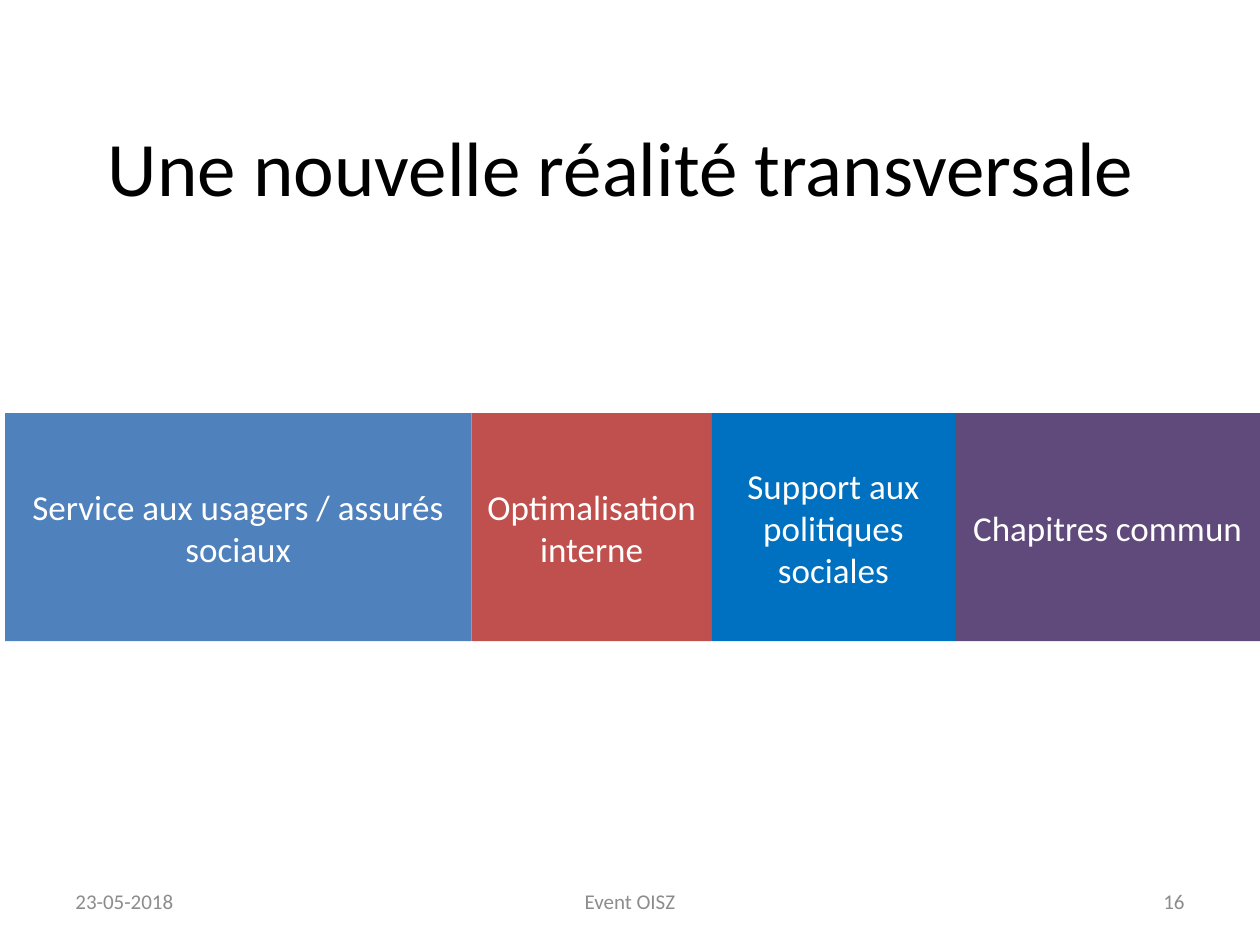
from pptx import Presentation
from pptx.dml.color import RGBColor
from pptx.enum import shapes, text
from pptx.util import Pt

FONT = "Calibri"
BLACK = RGBColor(0x00, 0x00, 0x00)
WHITE = RGBColor(0xFF, 0xFF, 0xFF)
GREY = RGBColor(0x8C, 0x8C, 0x8C)
BLUE = RGBColor(0x4F, 0x81, 0xBD)
RED = RGBColor(0xC0, 0x50, 0x4D)
BRIGHT_BLUE = RGBColor(0x00, 0x70, 0xC0)
PURPLE = RGBColor(0x60, 0x4A, 0x7B)

LEFT, CENTER, RIGHT = text.PP_ALIGN.LEFT, text.PP_ALIGN.CENTER, text.PP_ALIGN.RIGHT

TITLE = "Une nouvelle réalité transversale"
# text, left, width, alignment
FOOTERS = [
    ("23-05-2018", 36, 168, LEFT),
    ("Event OISZ", 246, 228, CENTER),
    ("16", 516, 168, RIGHT),
]
# text, width, fill
THEMES = [
    ("Service aux usagers / assurés sociaux", 266.4, BLUE),
    ("Optimalisation interne", 137.5, RED),
    ("Support aux politiques sociales", 139, BRIGHT_BLUE),
    ("Chapitres commun", 174.2, PURPLE),
]
BAND_LEFT, BAND_TOP, BAND_HEIGHT = 2.9, 236, 130.3


def write(shape, words, size, color, alignment):
    frame = shape.text_frame
    frame.word_wrap = True
    frame.vertical_anchor = text.MSO_ANCHOR.MIDDLE
    frame.text = words
    paragraph = frame.paragraphs[0]
    paragraph.alignment = alignment
    font = paragraph.runs[0].font
    font.name = FONT
    font.size = Pt(size)
    font.color.rgb = color


def add_label(slide, words, box, size, color, alignment):
    label = slide.shapes.add_textbox(*map(Pt, box))
    write(label, words, size, color, alignment)


def add_theme(slide, words, box, fill):
    block = slide.shapes.add_shape(shapes.MSO_SHAPE.RECTANGLE, *map(Pt, box))
    block.shadow.inherit = False
    block.fill.solid()
    block.fill.fore_color.rgb = fill
    block.line.fill.background()
    write(block, words, 20, WHITE, CENTER)


def main():
    presentation = Presentation()
    presentation.slide_width, presentation.slide_height = Pt(720), Pt(540)
    slide = presentation.slides.add_slide(presentation.slide_layouts[6])

    add_label(slide, TITLE, (31, 49.6, 648, 90), 44, BLACK, CENTER)
    for words, left, width, alignment in FOOTERS:
        add_label(slide, words, (left, 500.5, width, 28.75), 12, GREY, alignment)

    left = BAND_LEFT
    for words, width, fill in THEMES:
        add_theme(slide, words, (left, BAND_TOP, width, BAND_HEIGHT), fill)
        left += width

    presentation.save("out.pptx")


if __name__ == "__main__":
    main()
